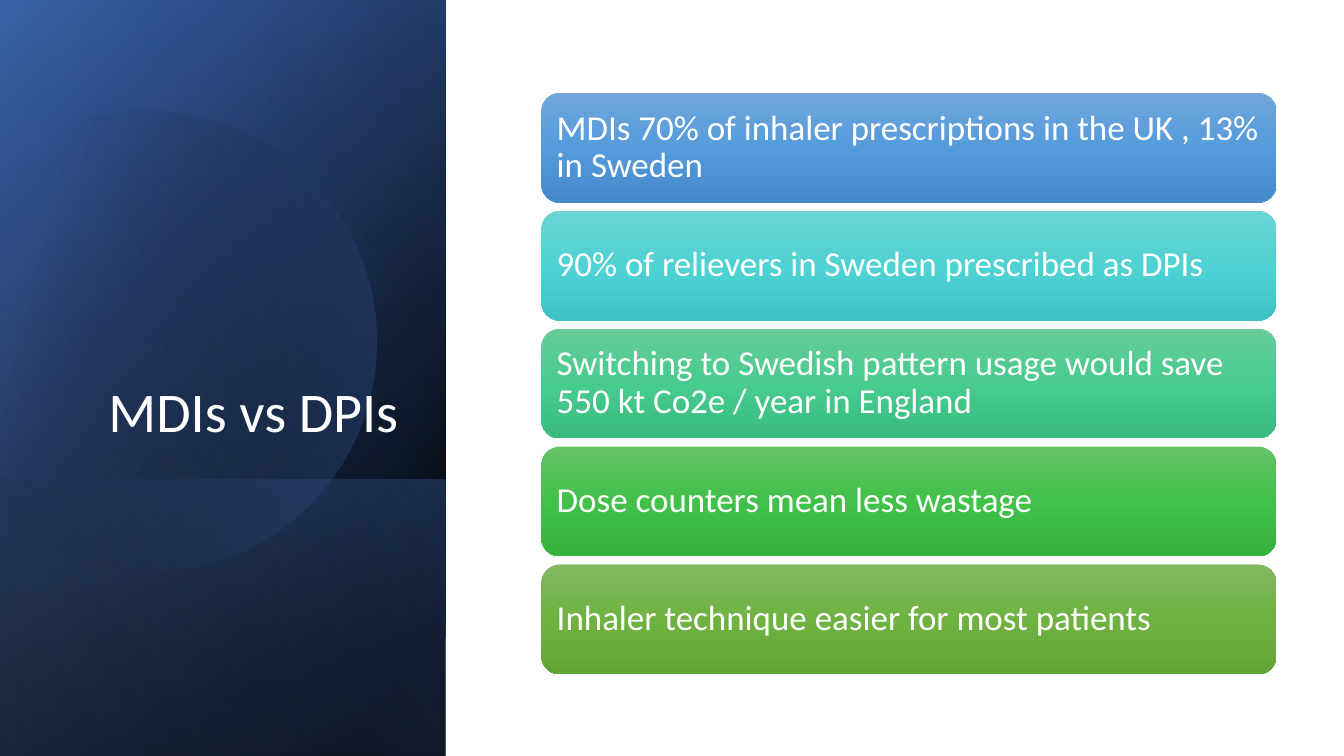
"""Build the MDIs vs DPIs slide: a layered gradient title panel and five statement bars."""
import math

from lxml import etree
from pptx import Presentation
from pptx.dml.color import RGBColor
from pptx.enum.shapes import MSO_SHAPE
from pptx.enum.text import MSO_ANCHOR, MSO_AUTO_SIZE, PP_ALIGN
from pptx.oxml.ns import qn
from pptx.util import Inches, Pt

RECTANGLE, ROUNDED = MSO_SHAPE.RECTANGLE, MSO_SHAPE.ROUNDED_RECTANGLE
BOTTOM, MIDDLE = MSO_ANCHOR.BOTTOM, MSO_ANCHOR.MIDDLE
LEFT, RIGHT = PP_ALIGN.LEFT, PP_ALIGN.RIGHT
NO_AUTOFIT = MSO_AUTO_SIZE.NONE

WHITE = RGBColor(0xFF, 0xFF, 0xFF)
BLACK = RGBColor(0x00, 0x00, 0x00)
NAVY = RGBColor(0x2F, 0x55, 0x97)
BLUE = RGBColor(0x44, 0x72, 0xC4)
PALE_BLUE = RGBColor(0x8F, 0xAA, 0xDC)


def paint_gradient(shape, stops, angle):
    """Fill with (position, colour, opacity) stops, in percent, without line or shadow."""
    shape.shadow.inherit = False
    shape.line.fill.background()
    shape.fill.gradient()
    gradient = shape.element.spPr.find(qn("a:gradFill"))
    stop_list = gradient.find(qn("a:gsLst"))
    for stop in list(stop_list):
        stop_list.remove(stop)
    for position, color, opacity in stops:
        stop = etree.SubElement(stop_list, qn("a:gs"), pos=str(position * 1000))
        value = etree.SubElement(stop, qn("a:srgbClr"), val=str(color))
        if opacity < 100:
            etree.SubElement(value, qn("a:alpha"), val=str(opacity * 1000))
    gradient.find(qn("a:lin")).set("ang", str(angle * 60000))


def write_text(shape, text, size, anchor, alignment):
    frame = shape.text_frame
    frame.word_wrap = True
    frame.auto_size = NO_AUTOFIT
    frame.vertical_anchor = anchor
    frame.margin_left = frame.margin_right = Inches(0.1)
    paragraph = frame.paragraphs[0]
    paragraph.alignment = alignment
    paragraph.line_spacing = 0.9
    run = paragraph.add_run()
    run.text = text
    run.font.name = "Calibri"
    run.font.size = Pt(size)
    run.font.color.rgb = WHITE


presentation = Presentation()
presentation.slide_width = Inches(13.33)
presentation.slide_height = Inches(7.5)
slide = presentation.slides.add_slide(presentation.slide_layouts[5])
shapes = slide.shapes

PANEL_WIDTH = 4.42
panel_layers = [
    (-1.54, 1.54, 7.5, [(8, BLACK, 100), (100, NAVY, 100)], 50),
    (-1.54, 1.55, 7.5, [(0, BLACK, 0), (99, BLUE, 46)], 30),
    (0.84, 3.92, 2.74, [(2, BLUE, 29), (100, BLACK, 30)], 130),
    (-1.54, 1.54, 7.5, [(0, BLACK, 0), (99, PALE_BLUE, 11)], 120),
]
for left, top, length, stops, angle in panel_layers:
    layer = shapes.add_shape(
        RECTANGLE, Inches(left), Inches(top), Inches(length), Inches(PANEL_WIDTH))
    layer.rotation = 90
    layer.element.spPr.find(qn("a:xfrm")).set("flipH", "1")
    paint_gradient(layer, stops, angle)
top_layer = layer

CENTER_X, CENTER_Y, RADIUS = Inches(1.44), Inches(3.35), Inches(2.29)
arc_angles = [math.radians(degree) for degree in (-118, -90, 0, 90, 150)]
arc_points = [(CENTER_X + RADIUS * math.cos(angle), CENTER_Y + RADIUS * math.sin(angle))
              for angle in arc_angles]
builder = shapes.build_freeform(*arc_points[0])
builder.add_line_segments(arc_points[1:], close=True)
cut_circle = builder.convert_to_shape()

segments = cut_circle.element.spPr.findall(".//" + qn("a:lnTo"))
for index, segment in enumerate(segments):
    start, end = arc_angles[index:index + 2]
    (start_x, start_y), (end_x, end_y) = arc_points[index:index + 2]
    handle = RADIUS * 4 / 3 * math.tan((end - start) / 4)
    curve_points = [
        (start_x - handle * math.sin(start), start_y + handle * math.cos(start)),
        (end_x + handle * math.sin(end), end_y - handle * math.cos(end)),
        (end_x, end_y),
    ]
    curve = etree.Element(qn("a:cubicBezTo"))
    for x, y in curve_points:
        etree.SubElement(curve, qn("a:pt"), x=str(round(x - cut_circle.left)),
                         y=str(round(y - cut_circle.top)))
    segment.getparent().replace(segment, curve)

cut_circle.rotation = 343.9
paint_gradient(cut_circle, [(29, BLACK, 0), (100, BLUE, 43)], 30)
top_layer.element.addprevious(cut_circle.element)

title = shapes.title
title.left, title.top = Inches(0.64), Inches(1.84)
title.width, title.height = Inches(3.41), Inches(2.62)
write_text(title, "MDIs vs DPIs", 40, BOTTOM, RIGHT)
top_layer.element.addnext(title.element)

BAR_TOP, BAR_PITCH = 0.92, 1.17
statements = [
    ("MDIs 70% of inhaler prescriptions in the UK , 13% in Sweden",
     ("71A6DB", "559BDB", "448ACA")),
    ("90% of relievers in Sweden prescribed as DPIs",
     ("6CD3D3", "4ED2D3", "3EC2C3")),
    ("Switching to Swedish pattern usage would save 550 kt Co2e / year in England",
     ("67CC9A", "47CB8E", "39BB7F")),
    ("Dose counters mean less wastage",
     ("63C368", "42C14A", "34B23D")),
    ("Inhaler technique easier for most patients",
     ("81B861", "6FB242", "62A336")),
]
for index, (text, colors) in enumerate(statements):
    bar = shapes.add_shape(
        ROUNDED, Inches(5.37), Inches(BAR_TOP + index * BAR_PITCH), Inches(7.29), Inches(1.09))
    stops = [(position, RGBColor.from_string(color), 100)
             for position, color in zip((0, 50, 100), colors)]
    paint_gradient(bar, stops, 90)
    write_text(bar, text, 25, MIDDLE, LEFT)

presentation.save("out.pptx")
